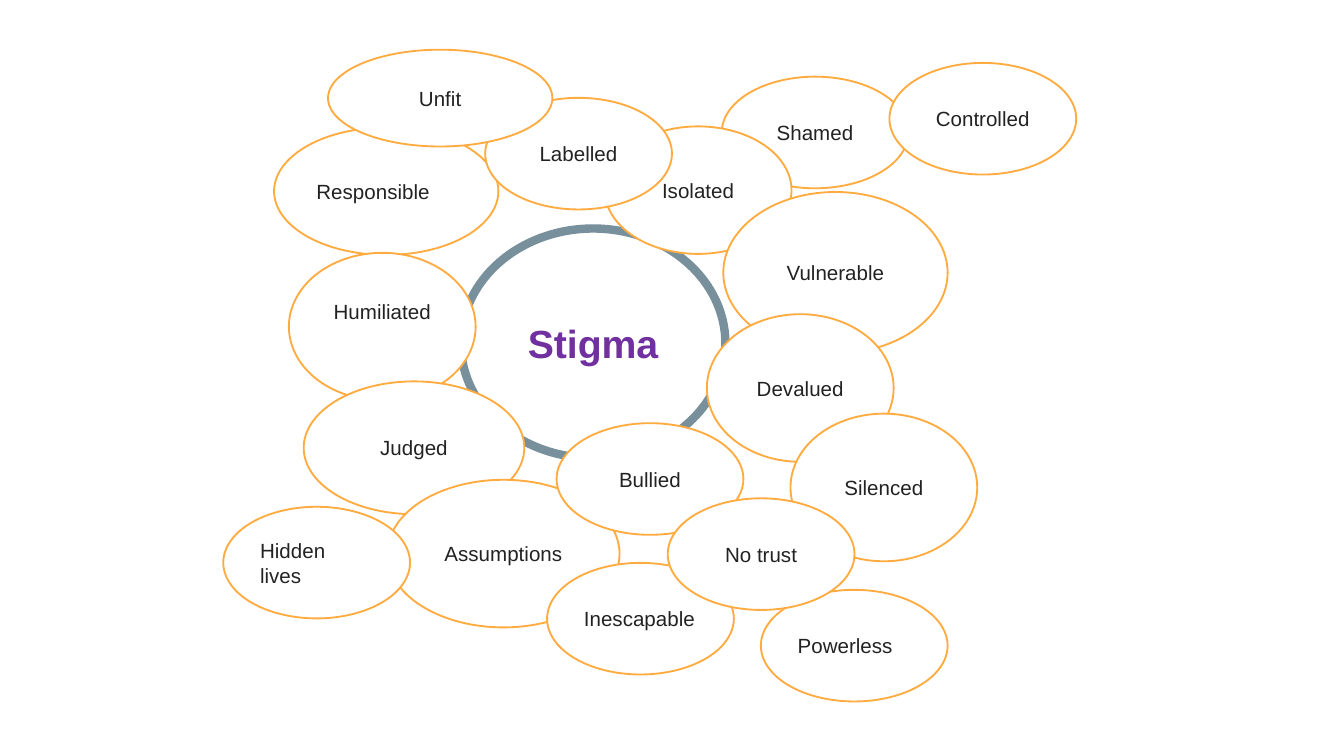
from dataclasses import dataclass

from pptx import Presentation
from pptx import util as u
from pptx.dml.color import RGBColor
from pptx.enum import shapes, text

WHITE = RGBColor(0xFF, 0xFF, 0xFF)
ORANGE = RGBColor(0xFF, 0xAB, 0x40)
SLATE = RGBColor(0x78, 0x90, 0x9C)
PURPLE = RGBColor(0x70, 0x30, 0xA0)
INK = RGBColor(0x22, 0x22, 0x22)

LEFT = text.PP_ALIGN.LEFT
CENTER = text.PP_ALIGN.CENTER
PAD_X, PAD_Y = 0.18, 0.1


@dataclass(frozen=True)
class Style:
    line: RGBColor
    line_width: float
    font_color: RGBColor
    font_size: float
    bold: bool = False


@dataclass(frozen=True)
class Bubble:
    """An ellipse with a word; lengths in centimetres."""
    label: str
    left: float
    top: float
    width: float = 3.53
    height: float = 2.11
    align: text.PP_ALIGN = CENTER
    pad_right: float = PAD_X
    pad_bottom: float = PAD_Y


CORE = Style(SLATE, 4.5, PURPLE, 21, True)
EFFECT = Style(ORANGE, 1, INK, 11)

STIGMA = Bubble("Stigma", 8.71, 4.32, 5, 4.34)

# Back to front, as the bubbles overlap
EFFECTS = [
    Bubble("Shamed", 13.64, 1.45),
    Bubble("Isolated", 11.43, 2.39, height=2.41),
    Bubble("Vulnerable", 13.67, 3.63, 4.24, 3.05),
    Bubble("Responsible", 5.18, 2.41, 4.24, 2.41, align=LEFT),
    Bubble("Humiliated", 5.46, 4.78, height=2.79, pad_bottom=0.68),
    Bubble("Judged", 5.74, 7.21, 4.17, 2.51),
    Bubble("Assumptions", 7.32, 9.07, 4.39, 2.79),
    Bubble("Devalued", 13.36, 5.94, height=2.79),
    Bubble("Silenced", 14.94, 7.82, height=2.79),
    Bubble("Labelled", 9.17, 1.85),
    Bubble("Inescapable", 10.34, 10.64, align=LEFT),
    Bubble("Bullied", 10.52, 8),
    Bubble("Powerless", 14.38, 11.15, align=LEFT),
    Bubble("Hidden lives", 4.22, 9.58, align=LEFT, pad_right=0.4),
    Bubble("Controlled", 16.81, 1.19),
    Bubble("No trust", 12.62, 9.42),
    Bubble("Unfit", 6.2, 0.94, 4.24, 1.83),
]


def draw_bubble(page, bubble: Bubble, style: Style) -> None:
    ellipse = page.shapes.add_shape(
        shapes.MSO_SHAPE.OVAL, u.Cm(bubble.left), u.Cm(bubble.top),
        u.Cm(bubble.width), u.Cm(bubble.height))
    ellipse.shadow.inherit = False
    ellipse.fill.solid()
    ellipse.fill.fore_color.rgb = WHITE
    ellipse.line.color.rgb = style.line
    ellipse.line.width = u.Pt(style.line_width)

    # Label
    frame = ellipse.text_frame
    frame.text = bubble.label
    frame.word_wrap = True
    frame.vertical_anchor = text.MSO_ANCHOR.MIDDLE
    frame.margin_left = u.Cm(PAD_X)
    frame.margin_right = u.Cm(bubble.pad_right)
    frame.margin_top = u.Cm(PAD_Y)
    frame.margin_bottom = u.Cm(bubble.pad_bottom)
    para = frame.paragraphs[0]
    para.alignment = bubble.align
    font = para.runs[0].font
    font.name = "Arial"
    font.size = u.Pt(style.font_size)
    font.bold = style.bold
    font.color.rgb = style.font_color


def main() -> None:
    deck = Presentation()
    deck.slide_width, deck.slide_height = u.Cm(25.4), u.Cm(14.29)
    page = deck.slides.add_slide(deck.slide_layouts[6])

    # Central idea, then the words around it
    draw_bubble(page, STIGMA, CORE)
    for bubble in EFFECTS:
        draw_bubble(page, bubble, EFFECT)

    deck.save("out.pptx")


if __name__ == "__main__":
    main()
